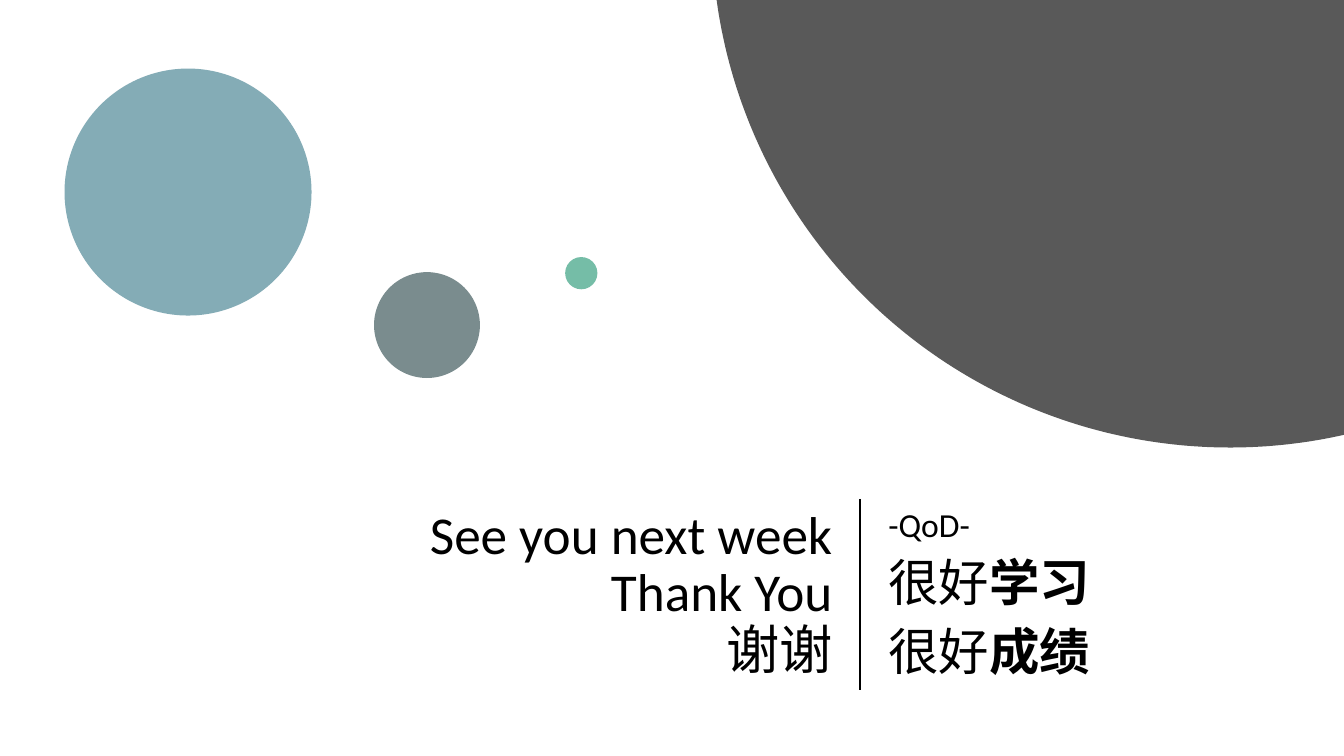
from math import acos, asin, cos, pi, sin

from lxml.etree import SubElement
from pptx import Presentation
from pptx.dml.color import RGBColor
from pptx.enum.shapes import MSO_CONNECTOR, MSO_SHAPE
from pptx.enum.text import MSO_ANCHOR, MSO_AUTO_SIZE, PP_ALIGN
from pptx.oxml.ns import qn
from pptx.util import Inches, Pt

BLACK = RGBColor(0x00, 0x00, 0x00)
BLUE = RGBColor(0x84, 0xAC, 0xB6)
SLATE = RGBColor(0x7A, 0x8C, 0x8E)
GREEN = RGBColor(0x75, 0xBD, 0xA7)
DARK = RGBColor(0x59, 0x59, 0x59)


class ClosingSlide:
    """Places elements on a grid of 100 columns by 100 rows."""

    font = "Calibri"

    def __init__(self, prs):
        self.width, self.height = prs.slide_width, prs.slide_height
        self.slide = prs.slides.add_slide(prs.slide_layouts[0])

    def col(self, n):
        return round(self.width * n / 100)

    def row(self, n):
        return round(self.height * n / 100)

    def text(self, sp, left, top, width, height, align):
        """Move a placeholder and return its formatted text frame."""
        sp.left, sp.top = self.col(left), self.row(top)
        sp.width, sp.height = self.col(width), self.row(height)
        tf = sp.text_frame
        tf.word_wrap = True
        tf.auto_size = MSO_AUTO_SIZE.NONE
        tf.vertical_anchor = MSO_ANCHOR.MIDDLE
        self.paragraph(tf.paragraphs[0], align)
        return tf

    def paragraph(self, p, align, before=0):
        p.alignment = align
        p.line_spacing = 0.9
        p.space_before = Pt(before)

    def run(self, p, text, size, bold=False):
        r = p.add_run()
        r.text = text
        r.font.name, r.font.size, r.font.bold = self.font, Pt(size), bold
        r.font.color.rgb = BLACK

    def title(self, lines, size, *box):
        p = self.text(self.slide.shapes.title, *box, PP_ALIGN.RIGHT).paragraphs[0]
        for i, line in enumerate(lines):
            if i:
                p.add_line_break()
            self.run(p, line, size)

    def subtitle(self, paragraphs, *box):
        """Each paragraph is a list of (text, size, bold) runs."""
        tf = self.text(self.slide.placeholders[1], *box, PP_ALIGN.LEFT)
        for i, runs in enumerate(paragraphs):
            p = tf.paragraphs[0]
            if i:
                p = tf.add_paragraph()
                self.paragraph(p, PP_ALIGN.LEFT, before=10)
            for text, size, bold in runs:
                self.run(p, text, size, bold)

    def paint(self, sp, color):
        sp.shadow.inherit = False
        sp.fill.solid()
        sp.fill.fore_color.rgb = color
        sp.line.fill.background()

    def circle(self, left, top, diameter, color):
        d = self.col(diameter)
        sp = self.slide.shapes.add_shape(
            MSO_SHAPE.OVAL, self.col(left), self.row(top), d, d)
        self.paint(sp, color)

    def corner_disc(self, center_col, center_row, radius, color, steps=120):
        """Draw the part of a large disc that lies inside the top right corner."""
        cx, cy, rad = self.col(center_col), self.row(center_row), self.col(radius)
        start = acos((self.width - cx) / rad)
        end = pi - asin(-cy / rad)
        angles = [start + (end - start) * i / steps for i in range(steps + 1)]
        arc = [(round(cx + rad * cos(a)), round(cy + rad * sin(a))) for a in angles]
        builder = self.slide.shapes.build_freeform(self.width, 0)
        builder.add_line_segments(arc, close=True)
        self.paint(builder.convert_to_shape(), color)

    def divider(self, x, top, bottom):
        line = self.slide.shapes.add_connector(
            MSO_CONNECTOR.STRAIGHT, self.col(x), self.row(top), self.col(x), self.row(bottom))
        line.line.color.rgb = BLACK
        line.line.width = Pt(1.5)
        SubElement(line._element.spPr, qn("a:effectLst"))


def main():
    prs = Presentation()
    prs.slide_width, prs.slide_height = Inches(13.33), Inches(7.5)
    s = ClosingSlide(prs)

    top, height = 66, 25.33
    s.title(["See you next week", "Thank You", "谢谢"], 38, 6.9, top, 55.8, height)
    wishes = [[("很好", 36, False), (word, 36, True)] for word in ("学习", "成绩")]
    s.subtitle([[("-QoD-", 24, False)], *wishes], 65.34, top, 32.33, height)

    for left, circle_top, diameter, color in (
        (4.8, 9.07, 18.38, BLUE),
        (27.83, 36, 7.88, SLATE),
        (42.05, 34, 2.4, GREEN),
    ):
        s.circle(left, circle_top, diameter, color)
    s.corner_disc(91.52, -9.33, 38.56, DARK)
    s.divider(64, top, top + height)

    prs.save("out.pptx")


if __name__ == "__main__":
    main()
